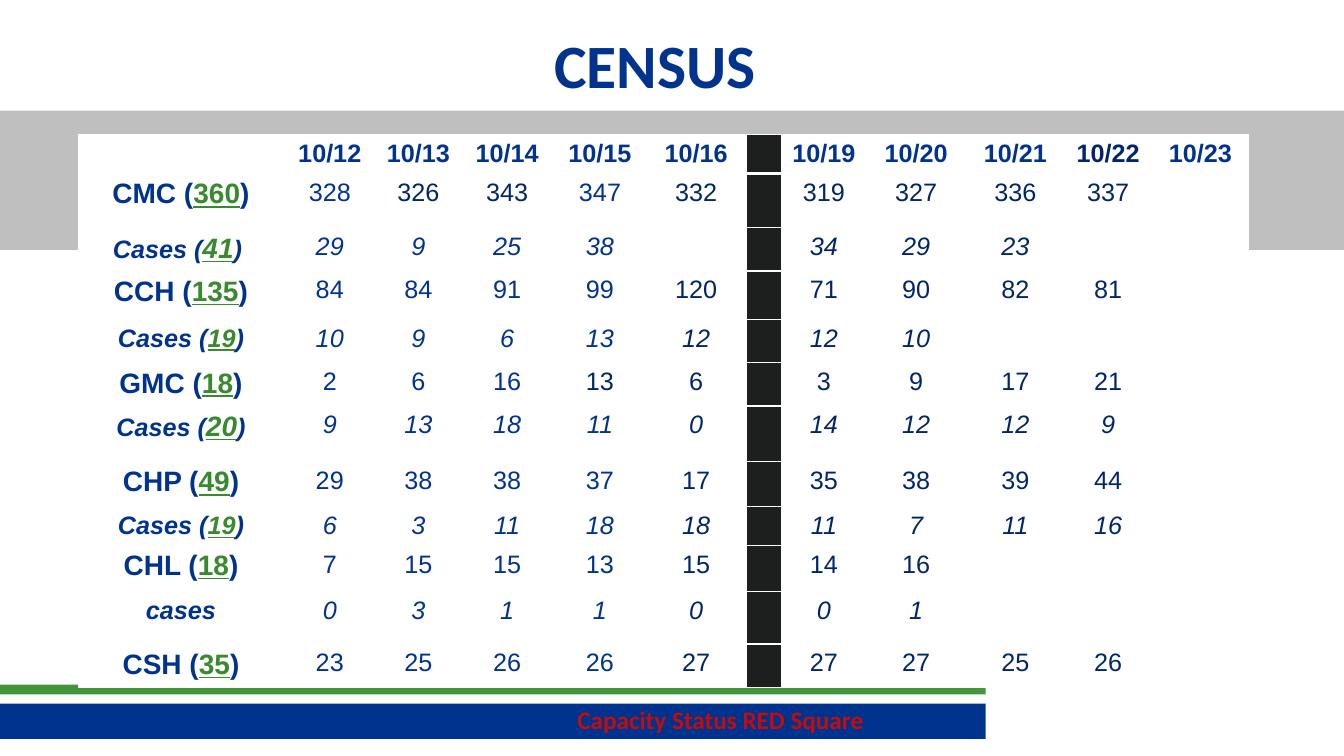
from lxml import etree
from pptx import Presentation
from pptx.dml.color import RGBColor
from pptx.enum.shapes import MSO_SHAPE
from pptx.enum.text import MSO_ANCHOR, MSO_AUTO_SIZE, PP_ALIGN
from pptx.oxml.ns import qn
from pptx.util import Cm, Pt

RECTANGLE = MSO_SHAPE.RECTANGLE
MIDDLE = MSO_ANCHOR.MIDDLE
CENTER = PP_ALIGN.CENTER
FIT_SHAPE = MSO_AUTO_SIZE.SHAPE_TO_FIT_TEXT

BLUE = RGBColor(0x00, 0x33, 0x8E)
NAVY = RGBColor(0x00, 0x26, 0x6A)
GREEN = RGBColor(0x39, 0x89, 0x2F)
BAR_GREEN = RGBColor(0x43, 0x95, 0x39)
GREY = RGBColor(0xBF, 0xBF, 0xBF)
BLACK = RGBColor(0x1D, 0x1E, 0x1E)
RED = RGBColor(0xC2, 0x0D, 0x0B)
WHITE = RGBColor(0xFF, 0xFF, 0xFF)

COL_WIDTHS = [5.16, 2.34, 2.13, 2.34, 2.34, 2.51, 0.91, 2.11, 2.54, 2.46, 2.21, 2.44]
ROW_HEIGHTS = [0.99, 1.37, 1.09, 1.22, 1.09, 1.09, 1.4, 1.14, 0.97, 1.17, 1.32, 1.09]
DIVIDER_COL = 6
DATES = ["10/12", "10/13", "10/14", "10/15", "10/16", "",
         "10/19", "10/20", "10/21", "10/22", "10/23"]
CENSUS = [
    ("CMC (", "360", ")", 20, [328, 326, 343, 347, 332, "", 319, 327, 336, 337]),
    ("Cases (", "41", ") ", 20, [29, 9, 25, 38, "", "", 34, 29, 23]),
    ("CCH (", "135", ")", 20, [84, 84, 91, 99, 120, "", 71, 90, 82, 81]),
    ("Cases (", "19", ")", 18, [10, 9, 6, 13, 12, "", 12, 10]),
    ("GMC (", "18", ")", 20, [2, 6, 16, 13, 6, "", 3, 9, 17, 21]),
    ("Cases (", "20", ")", 20, [9, 13, 18, 11, 0, "", 14, 12, 12, 9]),
    ("CHP (", "49", ")", 20, [29, 38, 38, 37, 17, "", 35, 38, 39, 44]),
    ("Cases (", "19", ")", 18, [6, 3, 11, 18, 18, "", 11, 7, 11, 16]),
    ("CHL (", "18", ")", 20, [7, 15, 15, 13, 15, "", 14, 16]),
    ("cases", "", "", 18, [0, 3, 1, 1, 0, "", 0, 1]),
    ("CSH (", "35", ")", 20, [23, 25, 26, 26, 27, "", 27, 27, 25, 26]),
]
FIRST_NAVY_COL = 5
EXTRA_NAVY = {(1, 2), (1, 3), (5, 4)}


def add_run(p, text, size, color, font="Arial", bold=False, italic=False, underline=False):
    r = p.add_run()
    r.text = text
    f = r.font
    f.name, f.size, f.bold, f.italic, f.underline = font, Pt(size), bold, italic, underline
    f.color.rgb = color


def add_bar(s, x, y, w, h, color):
    sp = s.shapes.add_shape(RECTANGLE, Cm(x), Cm(y), Cm(w), Cm(h))
    sp.shadow.inherit = False
    sp.fill.solid()
    sp.fill.fore_color.rgb = color
    sp.line.fill.background()


def add_title(s, x, y, w, h):
    title = s.shapes.title
    title.left, title.top, title.width, title.height = Cm(x), Cm(y), Cm(w), Cm(h)
    tf = title.text_frame
    tf.vertical_anchor = MIDDLE
    tf.margin_bottom = Cm(0.45)
    p = tf.paragraphs[0]
    p.alignment = CENTER
    add_run(p, "CENSUS", 44, BLUE, "Calibri", True)


def format_cell(cell, color, bottom_width):
    tc_pr = cell._tc.get_or_add_tcPr()
    for side, width in (("lnL", 1), ("lnR", 1), ("lnT", 1), ("lnB", bottom_width)):
        ln = etree.SubElement(tc_pr, qn("a:" + side), w=str(Pt(width)))
        fill = etree.SubElement(ln, qn("a:solidFill"))
        etree.SubElement(fill, qn("a:srgbClr"), val=str(WHITE))
    cell.fill.solid()
    cell.fill.fore_color.rgb = color
    if not cell.text_frame.text:
        cell.margin_top = cell.margin_bottom = 0


def add_census_table(s, x, y):
    frame = s.shapes.add_table(len(ROW_HEIGHTS), len(COL_WIDTHS), Cm(x), Cm(y),
                               Cm(sum(COL_WIDTHS)), Cm(sum(ROW_HEIGHTS)))
    table = frame.table
    table.first_row = table.horz_banding = False
    for col, width in zip(table.columns, COL_WIDTHS):
        col.width = Cm(width)
    for row, height in zip(table.rows, ROW_HEIGHTS):
        row.height = Cm(height)

    def paragraph(i, j):
        p = table.cell(i, j).text_frame.paragraphs[0]
        p.alignment = CENTER
        return p

    for j, date in enumerate(DATES, 1):
        if date:
            color = NAVY if date == "10/22" else BLUE
            add_run(paragraph(0, j), date, 18, color, bold=True)
    for i, (name, capacity, end, capacity_size, values) in enumerate(CENSUS, 1):
        cases = name.lower().startswith("cases")
        size = 18 if cases else 20
        p = paragraph(i, 0)
        add_run(p, name, size, BLUE, bold=True, italic=cases)
        if capacity:
            add_run(p, capacity, capacity_size, GREEN, bold=True, italic=cases, underline=True)
            add_run(p, end, size, BLUE, bold=True, italic=cases)
        for j, value in enumerate(values, 1):
            if value != "":
                navy = j >= FIRST_NAVY_COL or (i, j) in EXTRA_NAVY
                add_run(paragraph(i, j), str(value), 18, NAVY if navy else BLUE, italic=cases)
    for i, row in enumerate(table.rows):
        for j, cell in enumerate(row.cells):
            format_cell(cell, BLACK if j == DIVIDER_COL else WHITE, 1 if i else 3)


def add_status(s, x, y, w, h):
    box = s.shapes.add_textbox(Cm(x), Cm(y), Cm(w), Cm(h))
    tf = box.text_frame
    tf.word_wrap = False
    tf.auto_size = FIT_SHAPE
    add_run(tf.paragraphs[0], "Capacity Status RED Square", 18, RED, "Calibri", True)


def main():
    prs = Presentation()
    prs.slide_width, prs.slide_height = Cm(33.87), Cm(19.05)
    s = prs.slides.add_slide(prs.slide_layouts[5])
    add_bar(s, -0.08, 17.73, 24.92, 0.89, BLUE)
    add_bar(s, -0.08, 17.25, 24.92, 0.25, BAR_GREEN)
    add_title(s, 2.92, 0.43, 27.18, 2.69)
    add_bar(s, -0.03, 2.79, 33.9, 3.51, GREY)
    add_census_table(s, 1.98, 3.38)
    add_status(s, 14.3, 17.63, 8.26, 1.02)
    prs.save("out.pptx")


if __name__ == "__main__":
    main()
